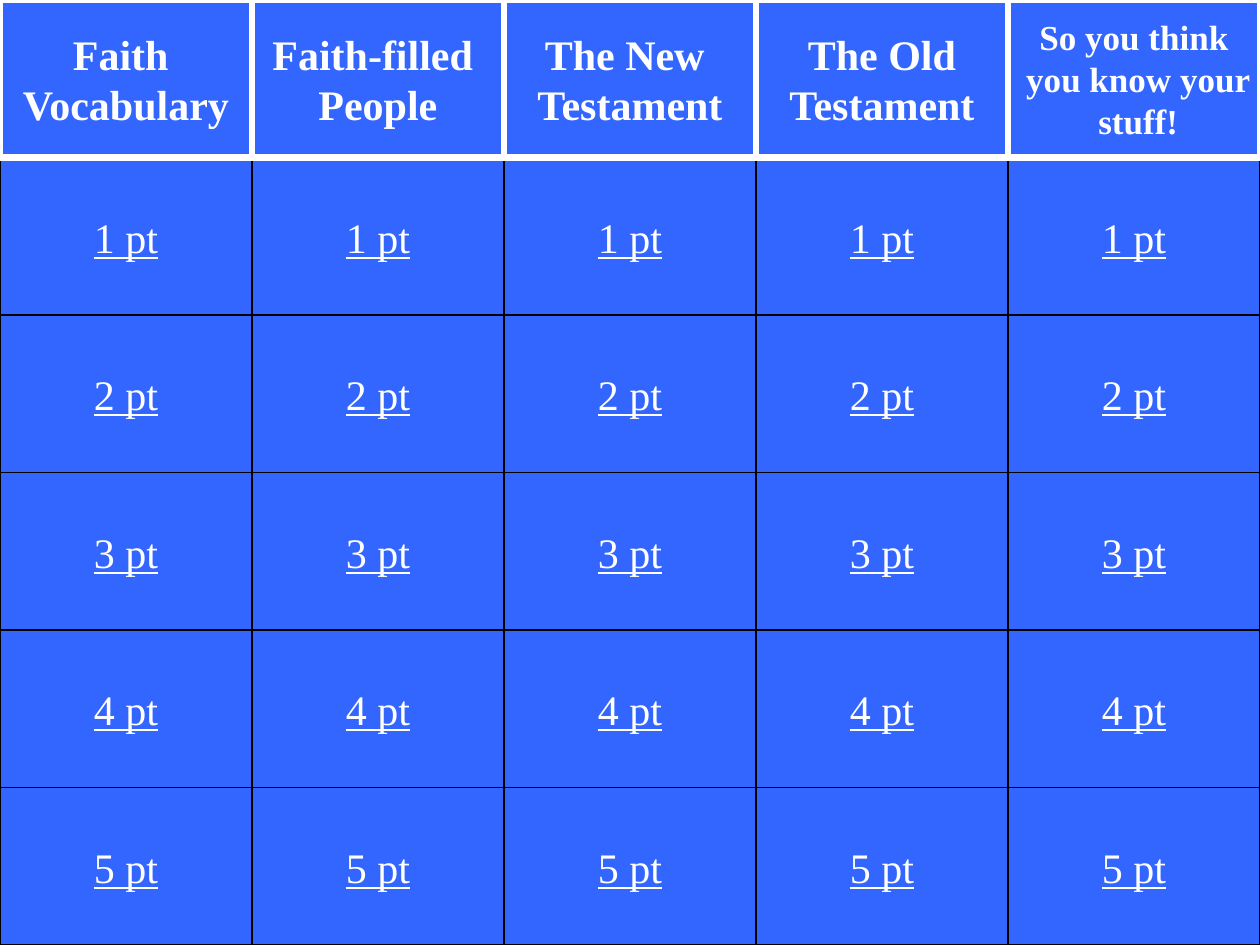
import pptx
import pptx.dml.color
import pptx.enum.shapes
import pptx.enum.text
import pptx.util

Pt = pptx.util.Pt
SHAPE = pptx.enum.shapes.MSO_SHAPE
BLUE, WHITE, BLACK = "3366FF", "FFFFFF", "000000"
CATEGORIES = [
    (["Faith ", "Vocabulary"], 24),
    (["Faith-filled ", "People"], 24),
    (["The New ", "Testament"], 24),
    (["The Old", "Testament"], 24),
    (["So you think", " you know your", " stuff!"], 20),
]
POINTS = range(1, 6)


def rgb(value):
    """Return the colour for a hex string."""
    return pptx.dml.color.RGBColor.from_string(value)


def add_cell(s, kind, box, lines, size, line_color, line_width):
    """Add one blue board cell with centred white text and return its runs."""
    sp = s.shapes.add_shape(kind, *map(Pt, box))
    sp.shadow.inherit = False
    sp.fill.solid()
    sp.fill.fore_color.rgb = rgb(BLUE)
    sp.line.color.rgb = rgb(line_color)
    sp.line.width = Pt(line_width)
    tf = sp.text_frame
    tf.text = "\n".join(lines)
    tf.word_wrap = False
    tf.vertical_anchor = pptx.enum.text.MSO_ANCHOR.MIDDLE
    runs = []
    for p in tf.paragraphs:
        p.alignment = pptx.enum.text.PP_ALIGN.CENTER
        for r in p.runs:
            r.font.name = "Times New Roman"
            r.font.size = Pt(size)
            r.font.color.rgb = rgb(WHITE)
            runs.append(r)
    return runs


def add_buttons(s, left, top, width, height):
    """Fill the box with a grid of point buttons."""
    w, h = width / len(CATEGORIES), height / len(POINTS)
    for col in range(len(CATEGORIES)):
        for row, points in enumerate(POINTS):
            box = (left + col * w, top + row * h, w, h)
            for r in add_cell(s, SHAPE.ACTION_BUTTON_CUSTOM, box,
                              [f"{points} pt"], 24, BLACK, 0.75):
                r.font.underline = True


def add_headers(s, left, top, width, height):
    """Fill the box with a row of category headings."""
    w = width / len(CATEGORIES)
    for col, (lines, size) in enumerate(CATEGORIES):
        box = (left + col * w, top, w, height)
        for r in add_cell(s, SHAPE.RECTANGLE, box, lines, size, WHITE, 3.5):
            r.font.bold = True


def main():
    """Build the game board slide and save it."""
    prs = pptx.Presentation()
    prs.slide_width, prs.slide_height = Pt(720), Pt(540)
    s = prs.slides.add_slide(prs.slide_layouts[6])
    s.background.fill.solid()
    s.background.fill.fore_color.rgb = rgb(BLUE)
    add_buttons(s, 0, 90, 720, 450)
    add_headers(s, 0, 0, 720, 90)
    prs.save("out.pptx")


if __name__ == "__main__":
    main()
